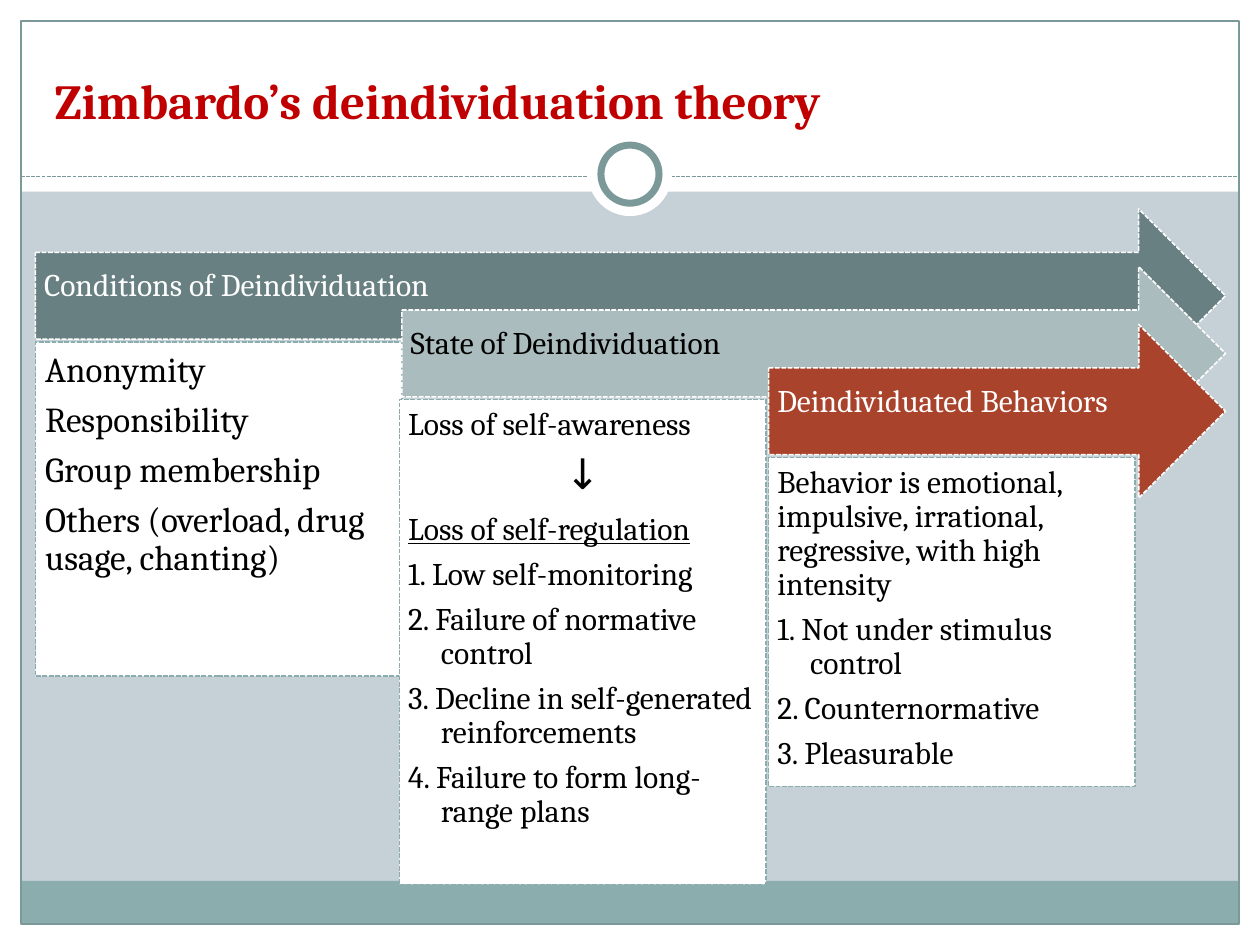
import pptx
import pptx.dml.color
import pptx.enum.dml
import pptx.enum.shapes
import pptx.enum.text
import pptx.oxml
import pptx.oxml.ns
import pptx.util
from lxml import etree

Pt = pptx.util.Pt
SHAPE = pptx.enum.shapes.MSO_SHAPE
ALIGN = pptx.enum.text.PP_ALIGN
ANCHOR = pptx.enum.text.MSO_ANCHOR


def rgb(value):
    """Turn a hex string into a colour."""
    return pptx.dml.color.RGBColor.from_string(value)


class StageSlide:
    """Hold the style and the slide that is being filled."""

    font = "Cambria"
    white, black = "FFFFFF", "000000"
    teal, frame, heading = "8CADAE", "7C999A", "C00000"

    def __init__(self, slide):
        """Start on a slide and colour its background."""
        self.slide = slide
        slide.background.fill.solid()
        slide.background.fill.fore_color.rgb = rgb("C5D1D7")

    def outline(self, line, color, width, dashed):
        """Style a line."""
        line.color.rgb = rgb(color)
        line.width = Pt(width)
        if dashed:
            line.dash_style = pptx.enum.dml.MSO_LINE.SQUARE_DOT

    def shape(self, kind, box, fill=None, line=None, width=0.9, dashed=False):
        """Add a preset shape at left, top, width, height."""
        shape = self.slide.shapes.add_shape(kind, *map(Pt, box))
        shape.shadow.inherit = False
        if fill:
            shape.fill.solid()
            shape.fill.fore_color.rgb = rgb(fill)
        else:
            shape.fill.background()
        if line:
            self.outline(shape.line, line, width, dashed)
        else:
            shape.line.fill.background()
        return shape

    def rule(self, left, right, top):
        """Add a dashed horizontal rule."""
        rule = self.slide.shapes.add_connector(
            pptx.enum.shapes.MSO_CONNECTOR.STRAIGHT, Pt(left), Pt(top), Pt(right), Pt(top))
        self.outline(rule.line, self.frame, 0.75, True)
        etree.SubElement(rule._element.spPr, pptx.oxml.ns.qn("a:effectLst"))

    def title(self, text, box):
        """Fill the title placeholder and bring it in front of the bands."""
        title = self.slide.shapes.title
        title.left, title.top, title.width, title.height = map(Pt, box)
        self.fill_text(title.text_frame, [text], 28, self.heading, ANCHOR.BOTTOM, (7.2, 3.6, 7.2, 3.6))
        title.text_frame.paragraphs[0].runs[0].font.bold = True
        self.slide.shapes._spTree.append(title._element)

    def fill_text(self, frame, lines, size, color, anchor, insets):
        """Set left-aligned paragraphs, with numbered ones hanging."""
        frame.word_wrap = True
        frame.auto_size = pptx.enum.text.MSO_AUTO_SIZE.NONE
        frame.vertical_anchor = anchor
        frame.margin_left, frame.margin_top, frame.margin_right, frame.margin_bottom = map(Pt, insets)
        frame.text = "\n".join(lines)
        for paragraph in frame.paragraphs:
            paragraph.alignment = ALIGN.LEFT
            paragraph.line_spacing = 0.9
            paragraph.space_before = Pt(0)
            paragraph.space_after = Pt(size * 0.35)
            if paragraph.text[0].isdigit():
                properties = paragraph._p.get_or_add_pPr()
                properties.set("marL", str(Pt(18.7)))
                properties.set("indent", str(-Pt(18.7)))
            for run in paragraph.runs:
                run.font.name = self.font
                run.font.size = Pt(size)
                run.font.color.rgb = rgb(color)

    def arrow(self, text, box, fill, color):
        """Add a labelled stage arrow."""
        arrow = self.shape(SHAPE.RIGHT_ARROW, box, fill, self.white, dashed=True)
        self.fill_text(arrow.text_frame, [text], 18, color, ANCHOR.MIDDLE, (5, 5, 20, 15.8))

    def card(self, lines, box, size):
        """Add a white card with the details of a stage."""
        card = self.shape(SHAPE.RECTANGLE, box, self.white, self.teal, dashed=True)
        self.fill_text(card.text_frame, lines, size, self.black, ANCHOR.TOP, (size * 0.28,) * 4)
        return card.text_frame.paragraphs


def main():
    """Build the slide and save it."""
    deck = pptx.Presentation()
    deck.slide_width, deck.slide_height = Pt(720), Pt(540)
    page = StageSlide(deck.slides.add_slide(deck.slide_layouts[5]))

    for band in ((0, 528, 720, 12), (0, 0, 720, 109.5), (0, 0, 12, 540), (708, 0, 12, 540)):
        page.shape(SHAPE.RECTANGLE, band, page.white)
    page.shape(SHAPE.RECTANGLE, (11.8, 503.3, 695.8, 24.4), page.teal)
    page.shape(SHAPE.RECTANGLE, (12, 12, 696, 516), line=page.frame, width=0.75)
    page.rule(12, 708, 100.7)
    page.shape(SHAPE.OVAL, (336, 75.5, 48, 48), page.white)
    page.shape(SHAPE.OVAL, (343.4, 82.9, 33.2, 33.2), page.white, page.frame, 4)
    page.title("Zimbardo’s deindividuation theory", (24, 18, 672, 60))

    conditions = ["Anonymity", "Responsibility", "Group membership",
                  "Others (overload, drug usage, chanting)"]
    state = ["Loss of self-awareness", "↓", "Loss of self-regulation", "1. Low self-monitoring",
             "2. Failure of normative control", "3. Decline in self-generated reinforcements",
             "4. Failure to form long-range plans"]
    behaviors = ["Behavior is emotional, impulsive, irrational, regressive, with high intensity",
                 "1. Not under stimulus control", "2. Counternormative", "3. Pleasurable"]
    stages = (
        ("Conditions of Deindividuation", "688081", page.white, conditions, 20, 20.2, 195.6, 190.8),
        ("State of Deindividuation", "AABCBD", page.black, state, 18, 228.2, 228.2, 277.2),
        ("Deindividuated Behaviors", "A9432B", page.white, behaviors, 18, 439.2, 261.4, 188),
    )
    first_left, right_edge, column, step = 20.2, 700.3, 209.5, 33
    details = []
    for order, (label, fill, color, lines, size, card_left, card_top, card_height) in enumerate(stages):
        left = first_left + order * column
        page.arrow(label, (left, 119.4 + order * step, right_edge - left, 99.2), fill, color)
        details.append(page.card(lines, (card_left, card_top, column, card_height), size))

    leads_to, regulation = details[1][1:3]
    leads_to.alignment = ALIGN.CENTER
    leads_to.space_after = Pt(8.4)
    leads_to.runs[0].font.size = Pt(24)
    leads_to.runs[0].font.name = "Karla"
    regulation.runs[0].font.underline = True

    deck.save("out.pptx")


if __name__ == "__main__":
    main()
